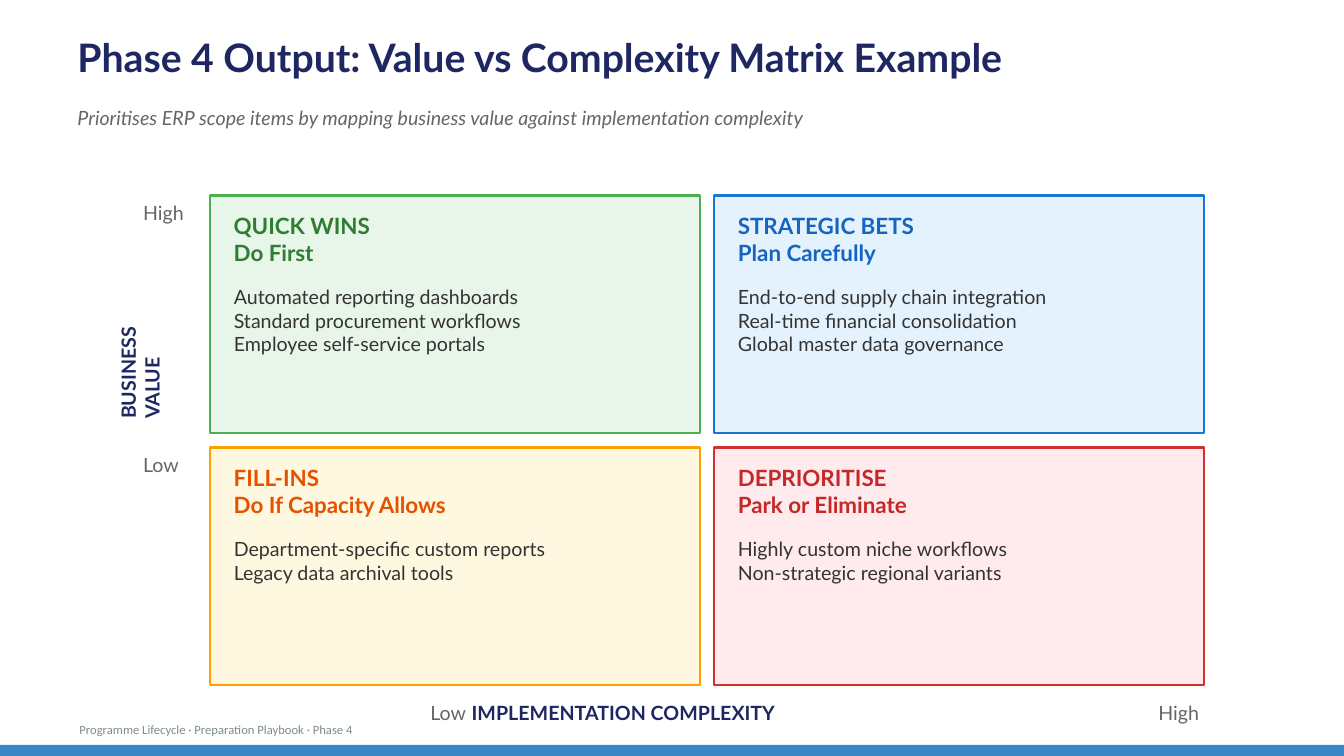
from pptx import Presentation
from pptx.dml.color import RGBColor
from pptx.enum import shapes
from pptx.util import Inches, Pt

WHITE = RGBColor(0xFF, 0xFF, 0xFF)
NAVY = RGBColor(0x1E, 0x27, 0x61)
GREY = RGBColor(0x66, 0x66, 0x66)
DARK = RGBColor(0x33, 0x33, 0x33)
FOOTER_GREY = RGBColor(0x7F, 0x8C, 0x8D)
BAR_BLUE = RGBColor(0x3A, 0x87, 0xC6)
GREEN = RGBColor(0x2E, 0x7D, 0x32)
GREEN_LINE = RGBColor(0x4C, 0xAF, 0x50)
GREEN_FILL = RGBColor(0xE8, 0xF5, 0xE9)
BLUE = RGBColor(0x15, 0x65, 0xC0)
BLUE_LINE = RGBColor(0x19, 0x76, 0xD2)
BLUE_FILL = RGBColor(0xE3, 0xF2, 0xFD)
ORANGE = RGBColor(0xE6, 0x51, 0x00)
AMBER_LINE = RGBColor(0xFF, 0xA0, 0x00)
AMBER_FILL = RGBColor(0xFF, 0xF8, 0xE1)
RED = RGBColor(0xC6, 0x28, 0x28)
RED_LINE = RGBColor(0xD3, 0x2F, 0x2F)
RED_FILL = RGBColor(0xFF, 0xEB, 0xEE)

# Matrix grid, in inches
MATRIX_LEFT, MATRIX_TOP = 2.08, 1.94
STEP_X, STEP_Y = 5, 2.5
QUADRANT_WIDTH, QUADRANT_HEIGHT = 4.86, 2.36
AXIS_TOP = 6.9

# Rows from high to low value, columns from low to high complexity
QUADRANTS = [
    [("QUICK WINS\nDo First",
      "Automated reporting dashboards\nStandard procurement workflows\n"
      "Employee self-service portals", GREEN, GREEN_LINE, GREEN_FILL),
     ("STRATEGIC BETS\nPlan Carefully",
      "End-to-end supply chain integration\nReal-time financial consolidation\n"
      "Global master data governance", BLUE, BLUE_LINE, BLUE_FILL)],
    [("FILL-INS\nDo If Capacity Allows",
      "Department-specific custom reports\nLegacy data archival tools",
      ORANGE, AMBER_LINE, AMBER_FILL),
     ("DEPRIORITISE\nPark or Eliminate",
      "Highly custom niche workflows\nNon-strategic regional variants",
      RED, RED_LINE, RED_FILL)],
]


def add_text(slide, content, left, top, width, height, size, color,
             bold=False, italic=False, font_name="Lato"):
    box = slide.shapes.add_textbox(Inches(left), Inches(top),
                                   Inches(width), Inches(height))
    box.text_frame.word_wrap = True
    paragraph = box.text_frame.paragraphs[0]
    paragraph.text = content
    font = paragraph.font
    font.name, font.size, font.bold, font.italic = font_name, Pt(size), bold, italic
    font.color.rgb = color
    return box


def add_rectangle(slide, left, top, width, height, fill, line=None):
    shape = slide.shapes.add_shape(shapes.MSO_SHAPE.RECTANGLE, Inches(left),
                                   Inches(top), Inches(width), Inches(height))
    shape.shadow.inherit = False
    shape.fill.solid()
    shape.fill.fore_color.rgb = fill
    if line is None:
        shape.line.fill.background()
    else:
        shape.line.color.rgb = line
        shape.line.width = Pt(1.5)


def add_quadrant(slide, left, top, heading, items, color, line, fill):
    add_rectangle(slide, left, top, QUADRANT_WIDTH, QUADRANT_HEIGHT, fill, line)
    add_text(slide, heading, left + 0.14, top + 0.12, 3.06, 0.62, 16, color, bold=True)
    add_text(slide, items, left + 0.14, top + 0.84, 4.51, 1.25, 14, DARK)


def add_axis_end(slide, label, left, top):
    add_text(slide, label, left, top, 0.69, 0.35, 14, GREY)


def main():
    presentation = Presentation()
    presentation.slide_width = Inches(13.33)
    presentation.slide_height = Inches(7.5)
    slide = presentation.slides.add_slide(presentation.slide_layouts[6])
    slide.background.fill.solid()
    slide.background.fill.fore_color.rgb = WHITE

    # Title and subtitle
    add_text(slide, "Phase 4 Output: Value vs Complexity Matrix Example",
             0.67, 0.28, 12, 0.69, 28, NAVY, bold=True)
    add_text(slide, "Prioritises ERP scope items by mapping business value "
             "against implementation complexity",
             0.67, 1, 12, 0.39, 14, GREY, italic=True)

    # Matrix
    for row, quadrants in enumerate(QUADRANTS):
        for column, quadrant in enumerate(quadrants):
            add_quadrant(slide, MATRIX_LEFT + column * STEP_X,
                         MATRIX_TOP + row * STEP_Y, *quadrant)

    # Value axis, wide enough to keep each word whole
    value_axis = add_text(slide, "BUSINESS VALUE", 0.74, 3.47, 1.15, 0.42,
                          14, NAVY, bold=True)
    value_axis.rotation = 270
    for row, label in enumerate(("High", "Low")):
        add_axis_end(slide, label, 1.32, MATRIX_TOP + row * STEP_Y)

    # Complexity axis
    add_text(slide, "IMPLEMENTATION COMPLEXITY", 4.58, AXIS_TOP, 4.17, 0.35,
             14, NAVY, bold=True)
    add_axis_end(slide, "Low", 4.17, AXIS_TOP)
    add_axis_end(slide, "High", 11.39, AXIS_TOP)

    # Footer
    add_text(slide, "Programme Lifecycle · Preparation Playbook · Phase 4",
             0.69, 7.11, 6.94, 0.28, 9, FOOTER_GREY, font_name="Calibri")
    add_rectangle(slide, 0, 7.39, 13.33, 0.11, BAR_BLUE)

    presentation.save("out.pptx")


if __name__ == "__main__":
    main()
